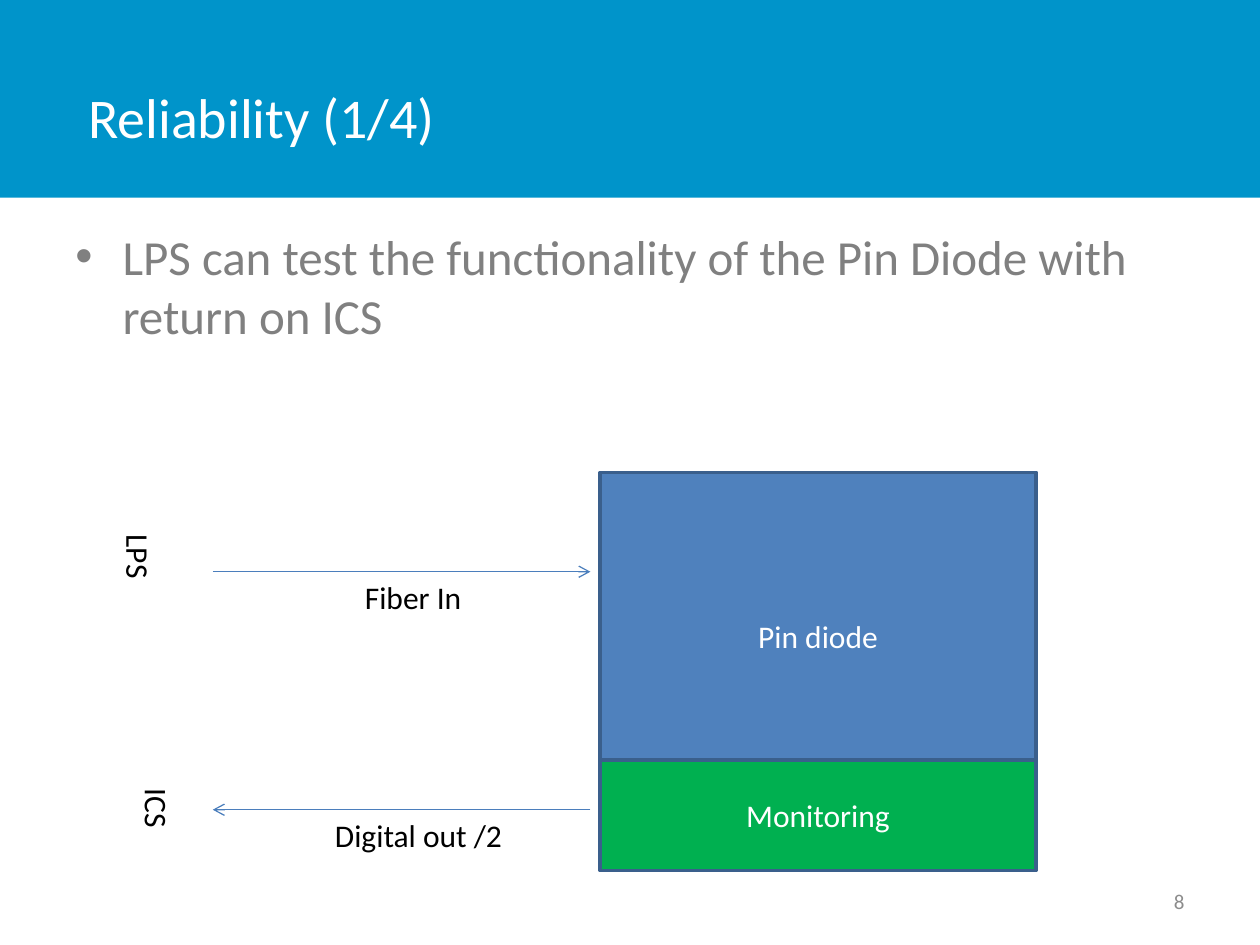
import pptx
import pptx.dml.color
import pptx.enum.shapes
import pptx.enum.text
import pptx.oxml
import pptx.oxml.ns
import pptx.util
from lxml import etree

Pt = pptx.util.Pt
Align = pptx.enum.text.PP_ALIGN
Anchor = pptx.enum.text.MSO_ANCHOR
qn = pptx.oxml.ns.qn

COLORS = {
    "banner": "0094CA",
    "white": "FFFFFF",
    "body": "808080",
    "number": "8C8C8C",
    "black": "000000",
    "arrow": "4B7EBC",
    "diode": "4F81BD",
    "monitoring": "00B050",
    "outline": "3A5F8C",
}


def rgb(name):
    return pptx.dml.color.RGBColor.from_string(COLORS[name])


def write_text(frame, text, size=18, color="black", align=Align.LEFT,
               anchor=Anchor.TOP, wrap=True, left_inset=7.2, bullet_indent=0):
    frame.word_wrap = wrap
    frame.vertical_anchor = anchor
    frame.margin_left = Pt(left_inset)
    paragraph = frame.paragraphs[0]
    paragraph.alignment = align
    if bullet_indent:
        properties = paragraph._p.get_or_add_pPr()
        properties.set("marL", str(Pt(bullet_indent)))
        properties.set("indent", str(-Pt(bullet_indent)))
        etree.SubElement(properties, qn("a:buFont"), typeface="Arial")
        etree.SubElement(properties, qn("a:buChar"), char="•")
    run = paragraph.add_run()
    run.text = text
    run.font.size = Pt(size)
    run.font.name = "Calibri"
    run.font.color.rgb = rgb(color)


class SlideBuilder:
    def __init__(self, slide):
        self.slide = slide

    def text(self, text, left, top, width, height, rotation=0, **style):
        box = self.slide.shapes.add_textbox(Pt(left), Pt(top), Pt(width), Pt(height))
        box.rotation = rotation
        write_text(box.text_frame, text, **style)

    def label(self, text, left, top, width, rotation=0):
        self.text(text, left, top, width, 29, rotation, wrap=False)

    def block(self, left, top, width, height, fill, text=None, outline=None):
        block = self.slide.shapes.add_shape(
            pptx.enum.shapes.MSO_SHAPE.RECTANGLE,
            Pt(left), Pt(top), Pt(width), Pt(height))
        block.shadow.inherit = False
        block.fill.solid()
        block.fill.fore_color.rgb = rgb(fill)
        if outline:
            block.line.color.rgb = rgb(outline)
            block.line.width = Pt(2)
        else:
            block.line.fill.background()
        if text:
            write_text(block.text_frame, text, color="white",
                       align=Align.CENTER, anchor=Anchor.MIDDLE)

    def arrow(self, start, end, y):
        arrow = self.slide.shapes.add_connector(
            pptx.enum.shapes.MSO_CONNECTOR.STRAIGHT, Pt(start), Pt(y), Pt(end), Pt(y))
        arrow.line.color.rgb = rgb("arrow")
        arrow.line.width = Pt(0.75)
        etree.SubElement(arrow.line._get_or_add_ln(), qn("a:tailEnd"), type="arrow")
        etree.SubElement(arrow._element.spPr, qn("a:effectLst"))


def main():
    presentation = pptx.Presentation()
    presentation.slide_width = Pt(720)
    presentation.slide_height = Pt(540)
    builder = SlideBuilder(presentation.slides.add_slide(presentation.slide_layouts[6]))

    builder.block(0, 0, 720, 113, "banner")
    builder.text("Reliability (1/4)", 36, 21.6, 562, 90, size=32, color="white",
                 anchor=Anchor.MIDDLE, left_inset=14.4)
    builder.text("LPS can test the functionality of the Pin Diode with return on ICS",
                 36, 126, 648, 116, size=28, color="body", bullet_indent=27)
    builder.text("8", 516, 500.5, 168, 28.75, size=12, color="number",
                 align=Align.RIGHT, anchor=Anchor.MIDDLE)

    signal_left, signal_right = 121.6, 337.4
    fiber_y, digital_y = 326.7, 462.7
    builder.arrow(signal_left, signal_right, fiber_y)
    builder.arrow(signal_right, signal_left, digital_y)
    builder.label("Fiber In", 201.4, fiber_y, 70.6)
    builder.label("Digital out /2", 184.3, digital_y, 111.6)
    builder.label("LPS", 59.5, 303.7, 39.6, rotation=90)
    builder.label("ICS", 71.2, 447.8, 37.4, rotation=90)

    block_left, block_width = 342.8, 249.4
    diode_top, monitoring_top, monitoring_bottom = 270, 434.4, 497.4
    builder.block(block_left, diode_top, block_width, 187.2,
                  "diode", "Pin diode", "outline")
    builder.block(block_left, monitoring_top, block_width,
                  monitoring_bottom - monitoring_top,
                  "monitoring", "Monitoring", "outline")

    presentation.save("out.pptx")


if __name__ == "__main__":
    main()
